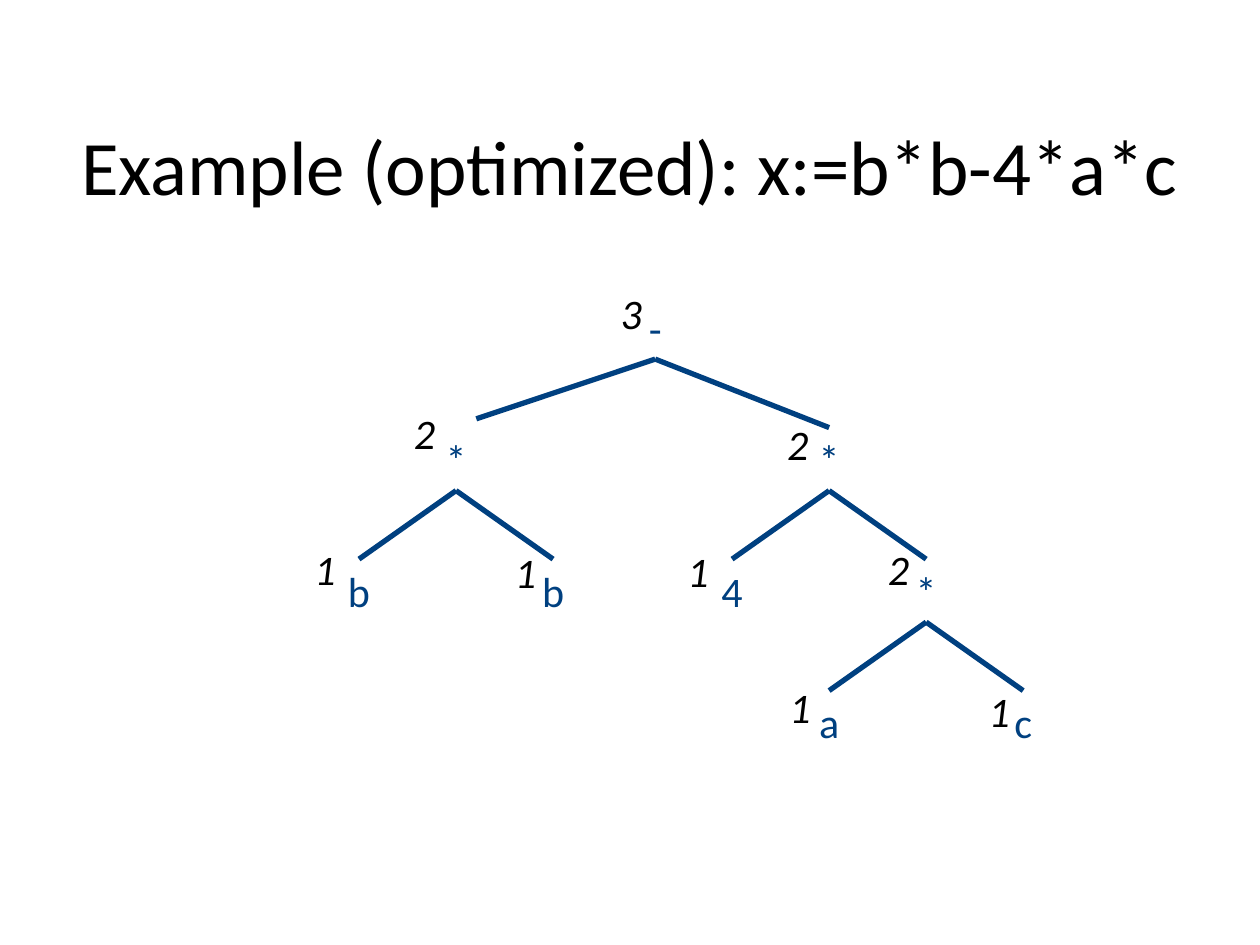
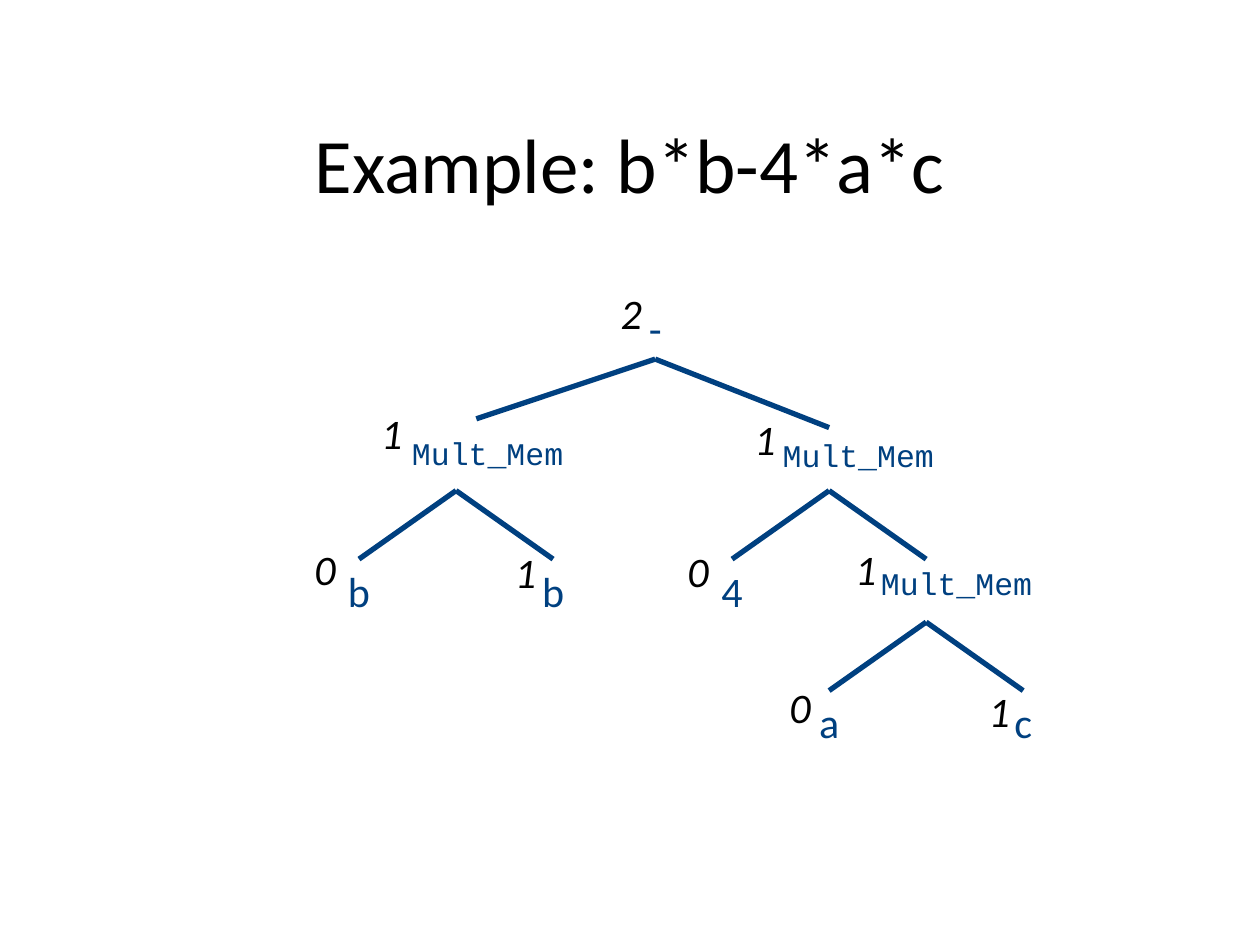
from dataclasses import dataclass

from lxml.etree import SubElement
from pptx import Presentation
from pptx.dml.color import RGBColor
from pptx.enum.shapes import MSO_CONNECTOR as Connector
from pptx.enum.text import MSO_ANCHOR as Anchor, MSO_AUTO_SIZE as AutoSize, PP_ALIGN as Align
from pptx.oxml.ns import qn
from pptx.util import Pt

BLACK, BLUE = "000000", "004080"
BODY_FONT, CODE_FONT = "Calibri", "Courier New"
NODE_WIDTH, NODE_HEIGHT = 44.6, 36
CODE_WIDTH, CODE_HEIGHT = 102.2, 29
ROOT_TOP, LEVEL_STEP = 169.2, 75.15
ROOT_X, LEFT_X, RIGHT_X, SPREAD = 374.4, 260.6, 473.8, 55.45


def color(hex_value):
    return RGBColor.from_string(hex_value)


@dataclass
class Node:
    """A tree node; the shifts place its register count and its code name."""
    x: float
    level: int
    count_shift: tuple
    code_shift: tuple = (0, 0)
    code_count_shift: tuple = (0, 0)

    @property
    def top(self):
        return ROOT_TOP + self.level * LEVEL_STEP


TREE = {
    "root": Node(ROOT_X, 0, (-13.7, -8.6)),
    "left": Node(LEFT_X, 1, (-18, -15.1), (18, 0), (-18.7, 0)),
    "left b": Node(LEFT_X - SPREAD, 2, (-19.4, -12.2)),
    "right b": Node(LEFT_X + SPREAD, 2, (-15.8, -10.8)),
    "right": Node(RIGHT_X, 1, (-18, -8.6), (16.6, 1.4), (-18.7, -2.9)),
    "four": Node(RIGHT_X - SPREAD, 2, (-19.4, -11.5)),
    "product": Node(RIGHT_X + SPREAD, 2, (-15.8, -12.2), (17.3, -0.7), (-18.7, 0)),
    "a": Node(RIGHT_X, 3, (-16.6, -8.6)),
    "c": Node(RIGHT_X + 2 * SPREAD, 3, (-13.7, -6.5)),
}
CHILDREN = {
    "root": ("left", "right"),
    "left": ("left b", "right b"),
    "right": ("four", "product"),
    "product": ("a", "c"),
}
EDGE_END_SHIFT = {"left": (11.6, -5)}


class TreeDeck:
    def __init__(self):
        self.deck = Presentation()
        self.deck.slide_width, self.deck.slide_height = Pt(720), Pt(540)
        self.slide = None

    def new_slide(self):
        self.slide = self.deck.slides.add_slide(self.deck.slide_layouts[6])

    def text(self, words, center, top, width, height, size=24, font=BODY_FONT,
             ink=BLUE, italic=False, wrap=True):
        box = self.slide.shapes.add_textbox(
            Pt(center - width / 2), Pt(top), Pt(width), Pt(height))
        frame = box.text_frame
        frame.word_wrap = wrap
        frame.auto_size = AutoSize.SHAPE_TO_FIT_TEXT
        paragraph = frame.paragraphs[0]
        paragraph.alignment = Align.CENTER
        run = paragraph.add_run()
        run.text = words
        run.font.name, run.font.size, run.font.italic = font, Pt(size), italic
        run.font.color.rgb = color(ink)
        return frame

    def title(self, words, top, width):
        frame = self.text(words, 360, top, width, 90, size=44, ink=BLACK)
        frame.auto_size = AutoSize.NONE
        frame.vertical_anchor = Anchor.MIDDLE

    def edge(self, parent, child, end_shift):
        dx, dy = end_shift
        line = self.slide.shapes.add_connector(
            Connector.STRAIGHT, Pt(parent.x), Pt(parent.top + NODE_HEIGHT),
            Pt(child.x + dx), Pt(child.top + dy))
        line.line.color.rgb = color(BLUE)
        line.line.width = Pt(3)
        SubElement(line._element.spPr, qn("a:effectLst"))

    def node(self, node, label, count):
        """Longer labels are instruction names, set in the code font."""
        is_code = len(label) > 1
        count_x, count_top = node.x + node.count_shift[0], node.top + node.count_shift[1]
        if is_code:
            dx, dy = node.code_shift
            self.text(label, node.x + dx, node.top + dy, CODE_WIDTH, CODE_HEIGHT,
                      size=18, font=CODE_FONT, wrap=False)
            count_x += node.code_count_shift[0]
            count_top += node.code_count_shift[1]
        else:
            self.text(label, node.x, node.top, NODE_WIDTH, NODE_HEIGHT)
        self.text(count, count_x, count_top, NODE_WIDTH, NODE_HEIGHT,
                  ink=BLACK, italic=True)

    def tree(self, labels, counts):
        """Draw the tree; labels and counts follow the order of TREE."""
        for parent, children in CHILDREN.items():
            for child in children:
                self.edge(TREE[parent], TREE[child], EDGE_END_SHIFT.get(child, (0, 0)))
        for node, label, count in zip(TREE.values(), labels, counts):
            self.node(node, label, count)


def main():
    deck = TreeDeck()

    deck.new_slide()
    deck.title("Example (optimized): x:=b*b-4*a*c", 49, 666)
    deck.tree("-*bb*4*ac", "321121211")

    deck.new_slide()
    deck.title("Example: b*b-4*a*c", 48, 612)
    multiply = "Mult_Mem"
    deck.tree(["-", multiply, "b", "b", multiply, "4", multiply, "a", "c"], "210110101")

    deck.deck.save("out.pptx")


if __name__ == "__main__":
    main()
